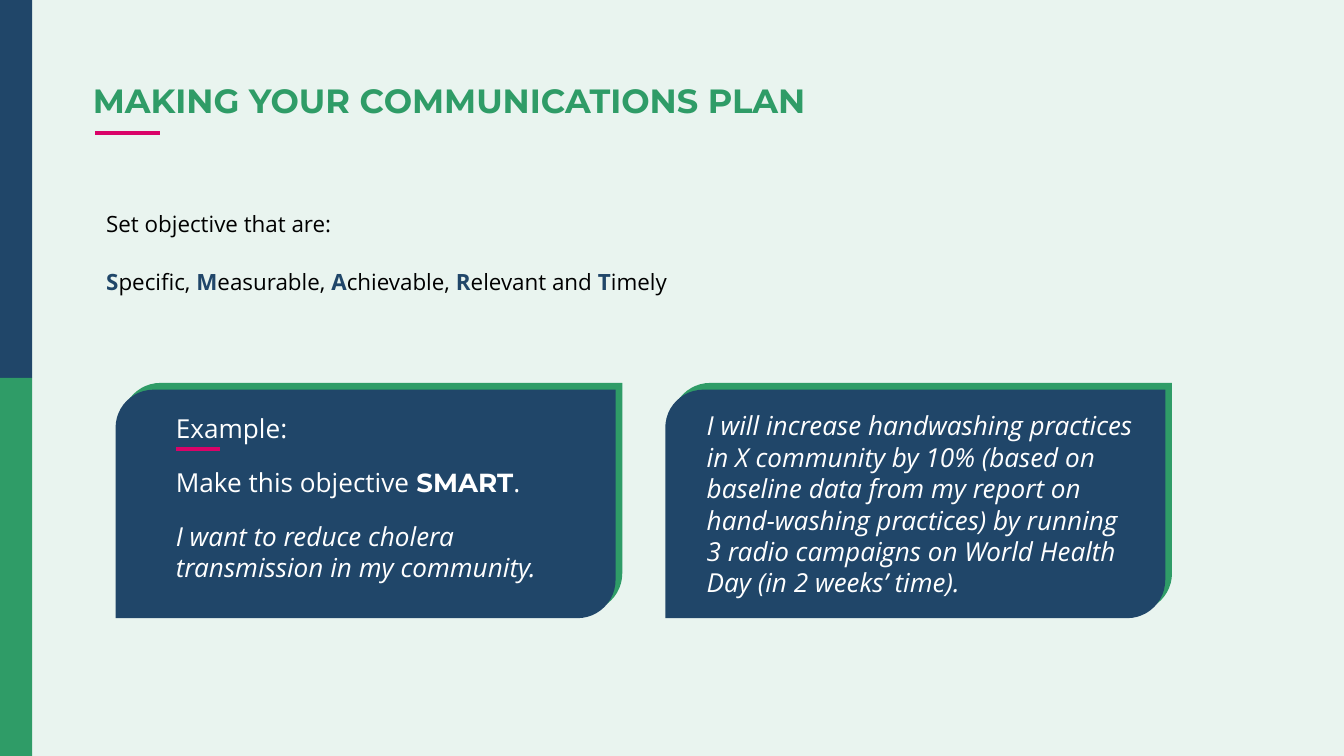
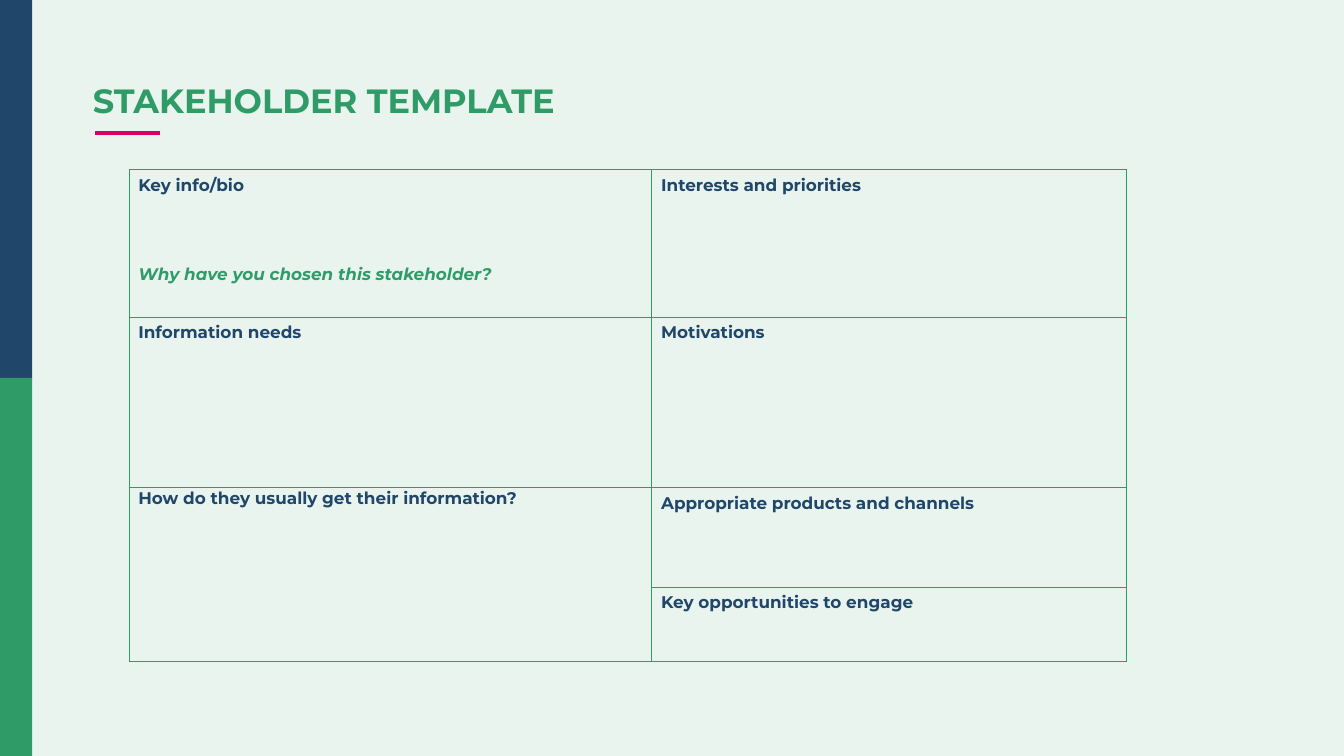
from lxml import etree
from pptx import Presentation
from pptx.dml.color import RGBColor
from pptx.enum.shapes import MSO_CONNECTOR, MSO_SHAPE
from pptx.enum.text import MSO_ANCHOR, MSO_AUTO_SIZE, PP_ALIGN
from pptx.oxml.ns import qn
from pptx.util import Inches, Pt

RECTANGLE = MSO_SHAPE.RECTANGLE
DIAGONAL_CARD = MSO_SHAPE.ROUND_2_DIAG_RECTANGLE
STRAIGHT = MSO_CONNECTOR.STRAIGHT
LEFT = PP_ALIGN.LEFT
TOP, MIDDLE = MSO_ANCHOR.TOP, MSO_ANCHOR.MIDDLE
NO_AUTOFIT = MSO_AUTO_SIZE.NONE

COLORS = {"green": "2F9C67", "navy": "204669", "pink": "D90368", "black": "000000", "white": "FFFFFF"}
HEADING_FONT, BODY_FONT = "Montserrat", "Open Sans"
SLIDE_WIDTH = 10
SLIDE_HEIGHT = SLIDE_WIDTH * 9 / 16

PLAN_TITLE = "MAKING YOUR COMMUNICATIONS PLAN"
OBJECTIVE_INTRO = "Set objective that are:"
SMART_WORDS = ["Specific, ", "Measurable, ", "Achievable, ", "Relevant and ", "Timely"]
EXAMPLE = [
    ["Example:"],
    ["Make this objective ", ("SMART", {"font": HEADING_FONT, "bold": True}), "."],
    [("I want to reduce cholera transmission in my community.", {"italic": True})],
]
ANSWER = (
    "I will increase handwashing practices in X community by 10% (based on baseline data "
    "from my report on hand-washing practices) by running 3 radio campaigns on World Health "
    "Day (in 2 weeks’ time)."
)

STAKEHOLDER_TITLE = "STAKEHOLDER TEMPLATE"
STAKEHOLDER_ROWS = [
    ["Key info/bio", "Interests and priorities"],
    ["Information needs", "Motivations"],
    ["How do they usually get their information?", "Appropriate products and channels"],
    ["", "Key opportunities to engage"],
]
STAKEHOLDER_QUESTION = "Why have you chosen this stakeholder?"
COLUMN_WIDTHS = [3.89, 3.53]
ROW_HEIGHTS = [1.1, 1.27, 0.74, 0.55]

CARD_LEFTS = [0.86, 4.95]
CARD_TOP, CARD_WIDTH, CARD_HEIGHT = 2.9, 3.72, 1.7
CARD_OFFSET = 0.05


def rgb(name):
    return RGBColor.from_string(COLORS[name])


def box(left, top, width, height):
    return [Inches(value) for value in (left, top, width, height)]


def add_text(paragraph, text, font=BODY_FONT, size=14, color="black", bold=False, italic=False):
    run = paragraph.add_run()
    run.text = text
    run.font.name = font
    run.font.size = Pt(size)
    run.font.color.rgb = rgb(color)
    run.font.bold = bold
    run.font.italic = italic


def fill_frame(frame, paragraphs, line_spacing, before=0, after=0, **style):
    frame.word_wrap = True
    for index, parts in enumerate(paragraphs):
        paragraph = frame.add_paragraph() if index else frame.paragraphs[0]
        paragraph.alignment = LEFT
        paragraph.line_spacing = line_spacing
        paragraph.space_before = Pt(before if index else 0)
        paragraph.space_after = Pt(after if index < len(paragraphs) - 1 else 0)
        for part in parts:
            text, changes = (part, {}) if isinstance(part, str) else part
            add_text(paragraph, text, **{**style, **changes})


def add_filled_shape(slide, preset, color, *position):
    shape = slide.shapes.add_shape(preset, *box(*position))
    shape.shadow.inherit = False
    shape.fill.solid()
    shape.fill.fore_color.rgb = rgb(color)
    shape.line.fill.background()
    return shape


def add_accent(slide, left, right, y):
    line = slide.shapes.add_connector(STRAIGHT, Inches(left), Inches(y), Inches(right), Inches(y))
    line.line.color.rgb = rgb("pink")
    line.line.width = Pt(2.25)
    etree.SubElement(line._element.spPr, qn("a:effectLst"))
    return line


def decorate_master(master, slide):
    fill = master.background.fill
    fill.solid()
    fill.fore_color.rgb = rgb("green")
    color = master._element.find(".//" + qn("p:bgPr")).find(".//" + qn("a:srgbClr"))
    etree.SubElement(color, qn("a:alpha"), val="10000")
    half = SLIDE_HEIGHT / 2
    parts = [
        add_filled_shape(slide, RECTANGLE, "navy", 0, 0, 0.24, half),
        add_filled_shape(slide, RECTANGLE, "green", 0, half, 0.24, half),
        add_accent(slide, 0.71, 1.19, 0.99),
    ]
    for number, shape in enumerate(parts, start=100):
        shape._element.find(".//" + qn("p:cNvPr")).set("id", str(number))
        master.shapes._spTree.append(shape._element)


def place(placeholder, *position):
    placeholder.left, placeholder.top, placeholder.width, placeholder.height = box(*position)
    placeholder.text_frame.auto_size = NO_AUTOFIT
    return placeholder.text_frame


def set_title(slide, text):
    frame = place(slide.shapes.title, 0.69, 0.58, 8.62, 0.37)
    frame.margin_left = 0
    frame.vertical_anchor = MIDDLE
    fill_frame(frame, [[text]], 0.9, font=HEADING_FONT, size=18, color="green", bold=True)


def set_objectives(slide):
    frame = place(slide.placeholders[1], 0.69, 1.5, 8.62, 0.79)
    frame.vertical_anchor = TOP
    smart = []
    for word in SMART_WORDS:
        smart += [(word[0], {"color": "navy", "bold": True}), word[1:]]
    fill_frame(frame, [[OBJECTIVE_INTRO], smart], Pt(15.4), before=15.4, size=12)
    for paragraph in frame.paragraphs:
        properties = paragraph._p.get_or_add_pPr()
        properties.set("marL", "0")
        properties.set("indent", "0")
        etree.SubElement(properties, qn("a:buNone"))


def add_text_box(slide, position, paragraphs, after=0, **style):
    frame = slide.shapes.add_textbox(*box(*position)).text_frame
    frame.margin_right = Inches(0.12)
    fill_frame(frame, paragraphs, Pt(16.8), after=after, color="white", **style)


def build_plan(slide):
    set_title(slide, PLAN_TITLE)
    set_objectives(slide)
    for left in CARD_LEFTS:
        for color, shift in (("green", CARD_OFFSET), ("navy", 0)):
            add_filled_shape(slide, DIAGONAL_CARD, color, left + shift, CARD_TOP - shift,
                             CARD_WIDTH, CARD_HEIGHT)
    add_text_box(slide, (1.21, 3.02, 3.01, 1.38), EXAMPLE, after=12)
    add_accent(slide, 1.31, 1.64, 3.34)
    add_text_box(slide, (5.16, 3, 3.41, 1.51), [[ANSWER]], italic=True)


def format_cell(cell):
    cell.margin_left = cell.margin_right = Inches(0.07)
    cell.margin_top = cell.margin_bottom = Inches(0.04)
    properties = cell._tc.get_or_add_tcPr()
    for side in ("lnL", "lnR", "lnT", "lnB"):
        border = etree.SubElement(properties, qn("a:" + side), w=str(Pt(0.5)))
        solid = etree.SubElement(border, qn("a:solidFill"))
        etree.SubElement(solid, qn("a:srgbClr"), val=COLORS["green"])
    cell.fill.background()


def build_stakeholder(slide):
    set_title(slide, STAKEHOLDER_TITLE)
    position = box(0.96, 1.26, sum(COLUMN_WIDTHS), sum(ROW_HEIGHTS))
    table = slide.shapes.add_table(len(ROW_HEIGHTS), len(COLUMN_WIDTHS), *position).table
    table.first_row = table.horz_banding = False
    for column, width in zip(table.columns, COLUMN_WIDTHS):
        column.width = Inches(width)
    for row, height in zip(table.rows, ROW_HEIGHTS):
        row.height = Inches(height)
    for row_index, labels in enumerate(STAKEHOLDER_ROWS):
        for column_index, label in enumerate(labels):
            cell = table.cell(row_index, column_index)
            format_cell(cell)
            if label:
                paragraphs = [[label]]
                if row_index == column_index == 0:
                    paragraphs.append([(STAKEHOLDER_QUESTION, {"color": "green", "italic": True})])
                fill_frame(cell.text_frame, paragraphs, 1.0, before=37, font=HEADING_FONT,
                           size=9, color="navy", bold=True)
    information = table.cell(2, 0)
    information.merge(table.cell(3, 0))
    information.margin_top = 0


def main():
    presentation = Presentation()
    presentation.slide_width = Inches(SLIDE_WIDTH)
    presentation.slide_height = Inches(SLIDE_HEIGHT)
    plan = presentation.slides.add_slide(presentation.slide_layouts[1])
    stakeholder = presentation.slides.add_slide(presentation.slide_layouts[5])
    decorate_master(presentation.slide_master, plan)
    build_plan(plan)
    build_stakeholder(stakeholder)
    presentation.save("out.pptx")


if __name__ == "__main__":
    main()
